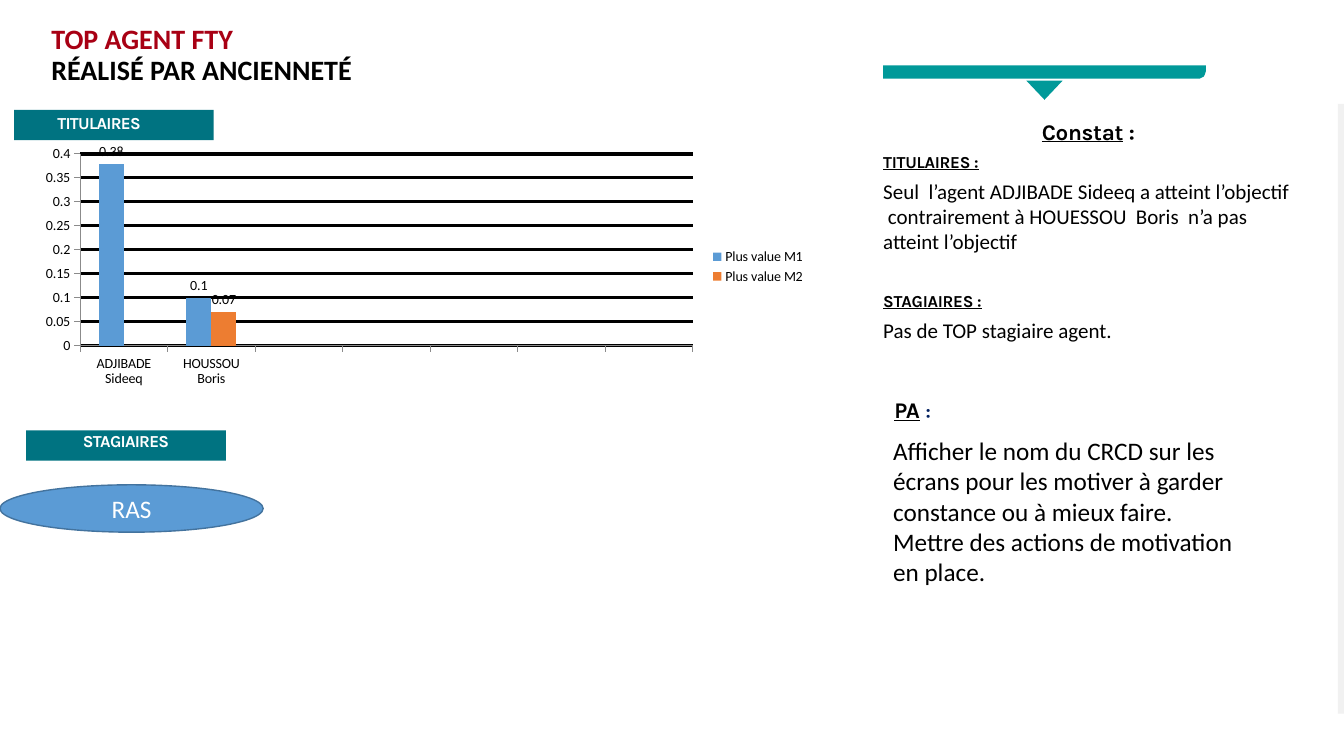
from lxml import etree
from pptx import Presentation
from pptx import util as u
from pptx.chart.data import CategoryChartData
from pptx.dml.color import RGBColor
from pptx.enum import chart as ch, shapes, text
from pptx.oxml.ns import qn

COLORS = {
    "black": "000000", "white": "FFFFFF", "red": "A80014", "navy": "001F5F",
    "teal": "009999", "banner": "007381", "strip": "F1F1F1", "axis": "8B8B8B",
    "blue": "5B9BD5", "blue_edge": "43739E", "orange": "ED7D31",
}
CENTER = text.PP_ALIGN.CENTER
BODY, HEADING = "Calibri", "Karla"


def rgb(name):
    return RGBColor.from_string(COLORS[name])


def paint(shape, fill, edge=None):
    shape.shadow.inherit = False
    shape.fill.solid()
    shape.fill.fore_color.rgb = rgb(fill)
    if edge:
        shape.line.color.rgb = rgb(edge)
        shape.line.width = u.Pt(1)
    else:
        shape.line.fill.background()


def add_preset(slide, preset, box, fill, edge=None):
    shape = slide.shapes.add_shape(preset, *map(u.Inches, box))
    paint(shape, fill, edge)
    return shape


def add_outline(slide, contours, fill):
    """Draw closed contours, given in inches, as one freeform."""
    builder = None
    for start, *rest in contours:
        x, y = map(u.Inches, start)
        if builder is None:
            builder = slide.shapes.build_freeform(x, y)
        else:
            builder.move_to(x, y)
        builder.add_line_segments([tuple(map(u.Inches, pt)) for pt in rest])
    paint(builder.convert_to_shape(), fill)


def set_frame(frame, insets, anchor=text.MSO_ANCHOR.TOP):
    frame.word_wrap = True
    frame.vertical_anchor = anchor
    frame.margin_left, frame.margin_top, frame.margin_right, frame.margin_bottom = (
        map(u.Inches, insets))


def add_text_box(slide, box, insets=(0, 0.01, 0, 0), anchor=text.MSO_ANCHOR.TOP):
    frame = slide.shapes.add_textbox(*map(u.Inches, box)).text_frame
    set_frame(frame, insets, anchor)
    frame.auto_size = text.MSO_AUTO_SIZE.SHAPE_TO_FIT_TEXT
    return frame


def add_paragraph(frame, align=None, before=None, indent=0):
    """Return the empty first paragraph, or a new one after the others."""
    para = frame.paragraphs[0]
    if para.runs:
        para = frame.add_paragraph()
        if before:
            para.space_before = u.Pt(before)
    if align is not None:
        para.alignment = align
    if indent:
        para._p.get_or_add_pPr().set("marL", str(u.Inches(indent)))
    return para


def add_run(para, words, size, font=BODY, color="black", bold=False,
            underline=False, spacing=0):
    run = para.add_run()
    run.text = words
    run.font.size = u.Pt(size)
    run.font.name = font
    run.font.bold = bold
    run.font.underline = underline
    run.font.color.rgb = rgb(color)
    if spacing:
        run._r.get_or_add_rPr().set("spc", str(round(spacing * 100)))


def add_heading(para, words, size, **style):
    add_run(para, words, size, HEADING, bold=True, **{"spacing": -0.2, **style})


def add_banner_label(para, words):
    add_heading(para, words, 12, color="white", spacing=-0.5)


def add_title(slide):
    frame = add_text_box(slide, (0.51, 0.24, 7.16, 0.62), anchor=text.MSO_ANCHOR.MIDDLE)
    para = add_paragraph(frame)
    para.line_spacing = 0.9
    add_run(para, "TOP AGENT FTY", 20, color="red", bold=True)
    para.add_line_break()
    add_run(para, "RÉALISÉ PAR ANCIENNETÉ", 20, bold=True)


def add_findings(slide):
    frame = add_text_box(slide, (8.76, 1.05, 4.07, 2.6), (0, 0.12, 0, 0))
    title = add_paragraph(frame, CENTER)
    add_heading(title, "Constat", 16, underline=True)
    add_heading(title, " :", 16)
    findings = [
        ("TITULAIRES :", 4.8, "Seul  l’agent ADJIBADE Sideeq a atteint l’objectif  "
         "contrairement à HOUESSOU  Boris  n’a pas atteint l’objectif"),
        ("STAGIAIRES :", 26, "Pas de TOP stagiaire agent."),
    ]
    for group, gap, finding in findings:
        add_heading(add_paragraph(frame, before=gap), group, 12, underline=True)
        add_run(add_paragraph(frame, before=4.8), finding, 15)


def add_action_plan(slide):
    title = add_paragraph(add_text_box(slide, (8.76, 3.92, 2.64, 0.28)), indent=0.11)
    add_heading(title, "PA", 16, underline=True)
    add_heading(title, " ", 16)
    add_heading(title, ":", 14, color="navy", spacing=-1.2)
    actions = add_text_box(slide, (8.76, 4.27, 3.86, 1.62), (0.1, 0.05, 0.1, 0.05))
    for action in (
        "Afficher le nom du CRCD sur les écrans pour les motiver à garder "
        "constance ou à mieux faire.",
        "Mettre des actions de motivation en place.",
    ):
        add_run(add_paragraph(actions), action, 18)


def add_agent_chart(slide):
    data = CategoryChartData()
    data.categories = ["ADJIBADE Sideeq", "HOUSSOU Boris"] + [""] * 5
    data.add_series("Plus value M1", [0.38, 0.1] + [None] * 5)
    data.add_series("Plus value M2", [None, 0.07] + [None] * 5)
    box = map(u.Inches, (0.3, 1.4, 7.79, 2.49))
    chart = slide.shapes.add_chart(ch.XL_CHART_TYPE.COLUMN_CLUSTERED, *box, data).chart
    chart.has_title = False
    chart.font.size = u.Pt(10)
    chart.font.name = BODY
    chart.font.color.rgb = rgb("black")
    chart.has_legend = True
    chart.legend.position = ch.XL_LEGEND_POSITION.RIGHT
    chart.legend.include_in_layout = False

    for axis in (chart.category_axis, chart.value_axis):
        axis.major_tick_mark = ch.XL_TICK_MARK.OUTSIDE
        axis.format.line.color.rgb = rgb("axis")
    scale = chart.value_axis
    scale.minimum_scale, scale.maximum_scale, scale.major_unit = 0, 0.4, 0.05
    scale.has_major_gridlines = True
    scale.major_gridlines.format.line.color.rgb = rgb("black")
    scale.major_gridlines.format.line.width = u.Pt(2.25)

    plot = chart.plots[0]
    plot.gap_width = 150
    plot.overlap = 0
    plot.vary_by_categories = False
    for series, color in zip(plot.series, ("blue", "orange")):
        series.format.fill.solid()
        series.format.fill.fore_color.rgb = rgb(color)
        series.data_labels.show_value = True
        series.data_labels.position = ch.XL_LABEL_POSITION.OUTSIDE_END


def main():
    deck = Presentation()
    deck.slide_width, deck.slide_height = u.Inches(13.33), u.Inches(7.5)
    slide = deck.slides.add_slide(deck.slide_layouts[6])
    preset = shapes.MSO_SHAPE

    strip = add_preset(slide, preset.RECTANGLE, (13.27, 1.03, 0.06, 6.05), "strip")
    strip_color = strip.fill._xPr.find(qn("a:solidFill"))[0]
    etree.SubElement(strip_color, qn("a:alpha")).set("val", "96000")

    pointer = [(10.54, 0.8), (10.18, 0.8), (10.36, 0.99)]
    bar = [(11.96, 0.65), (8.76, 0.65), (8.76, 0.78), (11.9, 0.78),
           (11.92, 0.77), (11.94, 0.76), (11.95, 0.74), (11.96, 0.71)]
    add_outline(slide, [pointer, bar], "teal")
    add_findings(slide)
    add_title(slide)
    add_action_plan(slide)

    add_preset(slide, preset.RECTANGLE, (0.14, 1.09, 1.98, 0.3), "banner")
    permanent = add_text_box(slide, (0.56, 1.11, 1.16, 0.22))
    add_banner_label(add_paragraph(permanent, indent=0.01), "TITULAIRES")
    add_agent_chart(slide)

    trainees = add_preset(slide, preset.RECTANGLE, (0.26, 4.27, 1.98, 0.3), "banner")
    set_frame(trainees.text_frame, (0, 0, 0, 0))
    add_banner_label(add_paragraph(trainees.text_frame, CENTER), "STAGIAIRES")
    status = add_preset(slide, preset.OVAL, (0, 4.81, 2.61, 0.47), "blue", "blue_edge")
    add_run(add_paragraph(status.text_frame, CENTER), "RAS", 18, color="white")

    deck.save("out.pptx")


if __name__ == "__main__":
    main()
